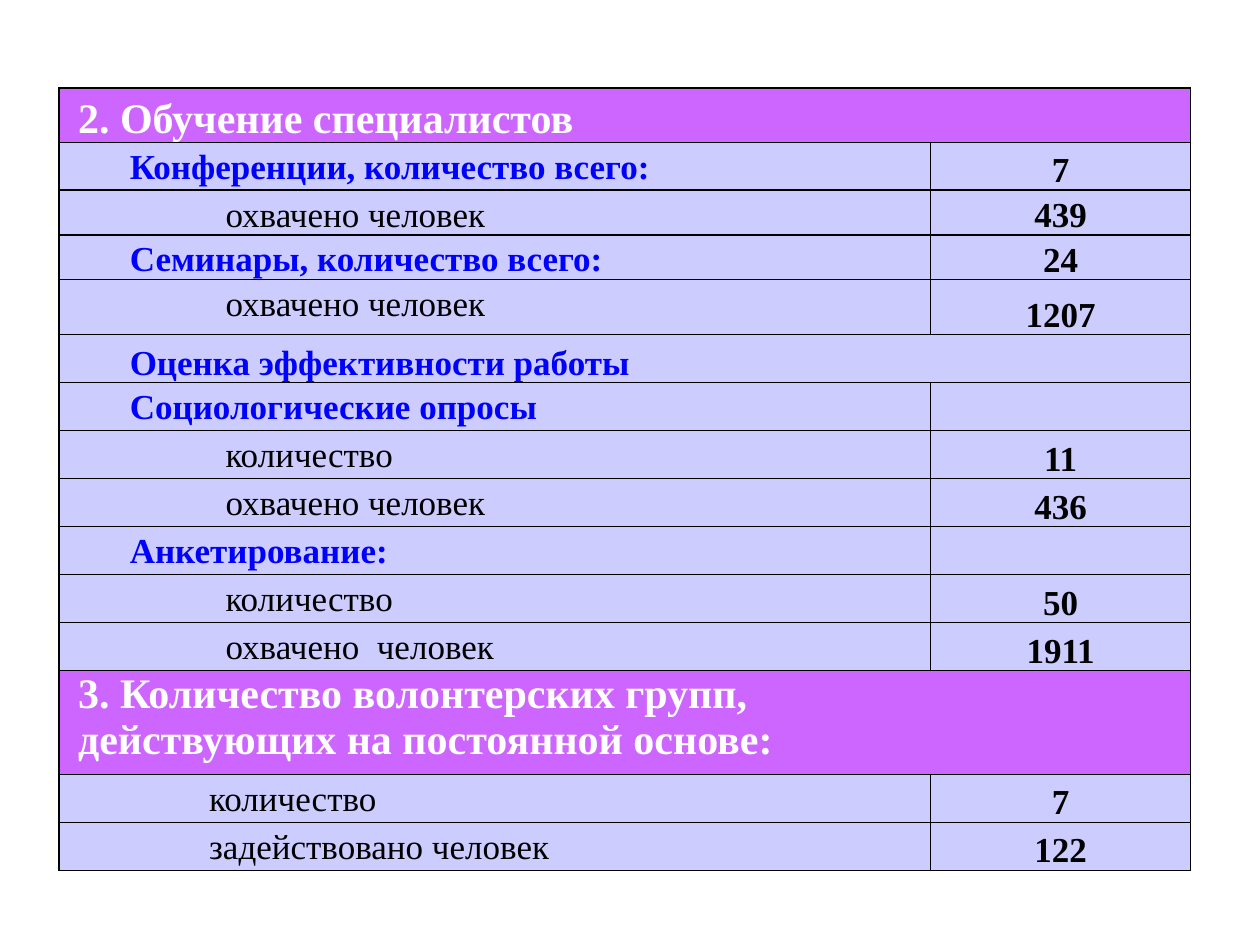
from lxml.etree import SubElement
from pptx import Presentation
from pptx.dml.color import RGBColor
from pptx.enum.text import MSO_ANCHOR as Anchor, PP_ALIGN as Align
from pptx.oxml.ns import qn
from pptx.util import Inches, Pt

COLORS = {"heading": "CC66FF", "cell": "CCCCFF", "white": "FFFFFF",
          "blue": "0000FF", "black": "000000"}
FONT = "Times New Roman"

# kind: (fill, text colour, size, bold, first-line indent in inches)
KINDS = {
    "heading": ("heading", "white", 24, True, 0.08),
    "topic": ("cell", "blue", 20, True, 0.49),
    "detail": ("cell", "black", 20, False, 1.25),
    "group": ("cell", "black", 20, False, 1.12),
    "value": ("cell", "black", 20, True, 0),
}

# (kind, label, value or None for a full-width row, row weight, anchor)
TRAINING = [
    ("heading", "2. Обучение специалистов", None, 43, Anchor.BOTTOM),
    ("topic", "Конференции, количество всего:", "7", 38, Anchor.TOP),
    ("detail", "охвачено человек", "439", 35, Anchor.TOP),
    ("topic", "Семинары, количество всего:", "24", 35, Anchor.TOP),
    ("detail", "охвачено человек", "1207", 44, Anchor.TOP),
]
EVALUATION = [
    ("topic", "Оценка эффективности работы", None, 38, Anchor.BOTTOM),
    ("topic", "Социологические опросы", "", 38, Anchor.TOP),
    ("detail", "количество", "11", 38, Anchor.TOP),
    ("detail", "охвачено человек", "436", 38, Anchor.TOP),
    ("topic", "Анкетирование:", "", 38, Anchor.TOP),
    ("detail", "количество", "50", 38, Anchor.TOP),
    ("detail", "охвачено  человек", "1911", 38, Anchor.TOP),
    ("heading", "3. Количество волонтерских групп,\nдействующих на постоянной основе:",
     None, 82, Anchor.TOP),
    ("group", "количество", "7", 38, Anchor.TOP),
    ("group", "задействовано человек", "122", 38, Anchor.TOP),
]


def rgb(name):
    return RGBColor.from_string(COLORS[name])


def add_borders(cell):
    properties = cell._tc.get_or_add_tcPr()
    for index, side in enumerate(("a:lnL", "a:lnR", "a:lnT", "a:lnB")):
        line = properties.makeelement(qn(side), {"w": str(Pt(1))})
        fill = SubElement(line, qn("a:solidFill"))
        SubElement(fill, qn("a:srgbClr"), val=COLORS["black"])
        properties.insert(index, line)


def fill_cell(cell, text, kind, anchor, align, spacing):
    fill, color, size, bold, indent = KINDS[kind]
    cell.fill.solid()
    cell.fill.fore_color.rgb = rgb(fill)
    cell.margin_left = cell.margin_right = Inches(0.07)
    cell.margin_top = cell.margin_bottom = 0
    cell.vertical_anchor = anchor
    add_borders(cell)
    cell.text_frame.text = text
    for para in cell.text_frame.paragraphs:
        para.alignment = align
        para.line_spacing = spacing
        para._p.get_or_add_pPr().set("indent", str(Inches(indent)))
        for span in para.runs:
            span.font.name = FONT
            span.font.size = Pt(size)
            span.font.bold = bold
            span.font.color.rgb = rgb(color)


def add_report_table(page, box, rows, label_share, value_spacing):
    left, top, width, height = box
    table = page.shapes.add_table(len(rows), 2, left, top, width, height).table
    table.first_row = table.horz_banding = False
    table.columns[0].width = int(width * label_share)
    table.columns[1].width = width - table.columns[0].width
    total = sum(row[3] for row in rows)
    for index, (kind, label, value, weight, anchor) in enumerate(rows):
        table.rows[index].height = int(height * weight / total)
        label_cell, value_cell = table.cell(index, 0), table.cell(index, 1)
        two_lines = "\n" in label
        fill_cell(label_cell, label, kind, anchor,
                  Align.LEFT if two_lines else Align.JUSTIFY,
                  1.0 if two_lines else 1.15)
        if value is None:
            add_borders(value_cell)
            label_cell.merge(value_cell)
        else:
            fill_cell(value_cell, value, "value", Anchor.BOTTOM,
                      Align.CENTER, value_spacing)


def main():
    deck = Presentation()
    deck.slide_width, deck.slide_height = Inches(10), Inches(7.5)
    page = deck.slides.add_slide(deck.slide_layouts[6])

    def box(left, top, width, height):
        """Turn percentages of the slide into lengths."""
        return (int(deck.slide_width * left / 100), int(deck.slide_height * top / 100),
                int(deck.slide_width * width / 100), int(deck.slide_height * height / 100))

    # Training of specialists
    add_report_table(page, box(4.7, 9.33, 89.8, 26), TRAINING, 0.77, 1.15)
    # Evaluation of the work and volunteer groups
    add_report_table(page, box(4.7, 35.4, 89.8, 56.7), EVALUATION, 0.77, 1.0)
    deck.save("out.pptx")


if __name__ == "__main__":
    main()
